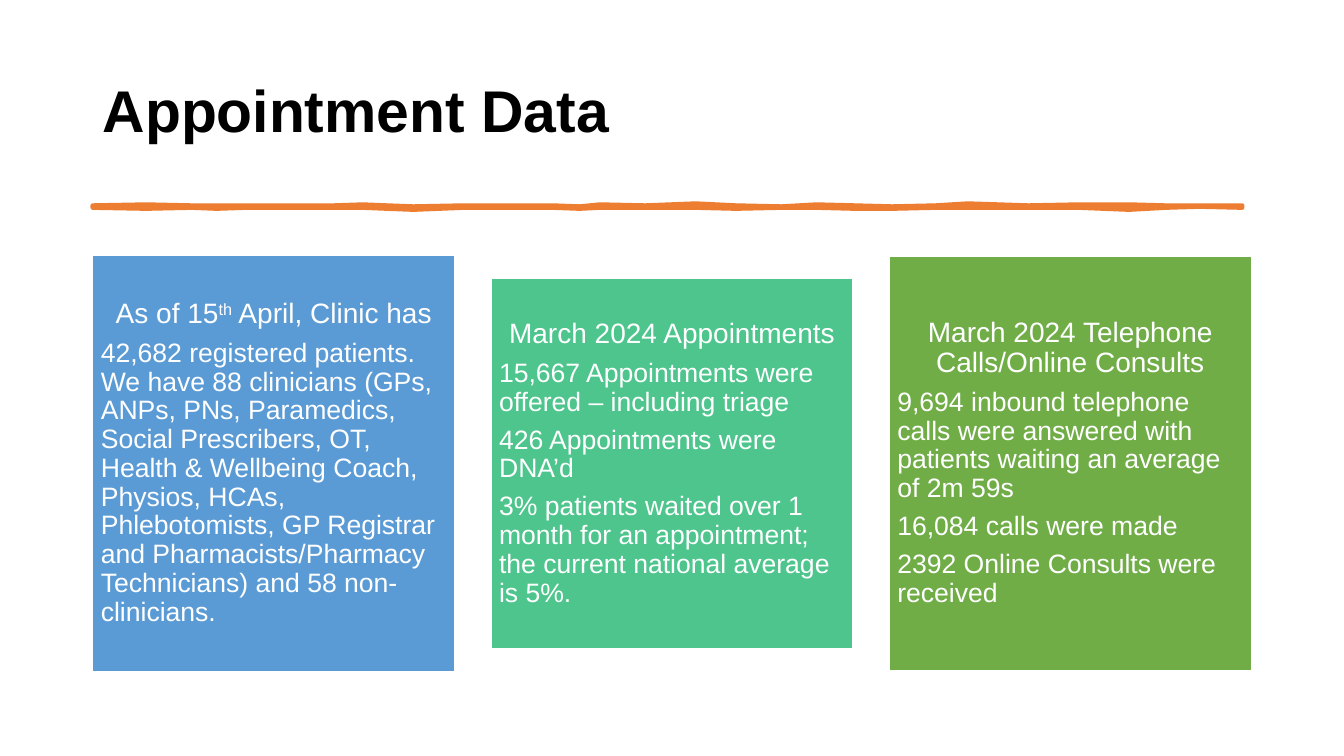
from pptx import Presentation
from pptx.dml.color import RGBColor
from pptx.enum.shapes import MSO_SHAPE
from pptx.enum.text import MSO_ANCHOR, PP_ALIGN
from pptx.util import Inches, Pt

FONT = "Arial"
COLORS = {
    "title": "000000",
    "rule": "ED7D31",
    "patients": "5B9BD5",
    "appointments": "4DC58D",
    "calls": "70AD47",
    "white": "FFFFFF",
}
TITLE = "Appointment Data"
CARDS = [
    {
        "color": "patients", "top": 2.53, "height": 4.13,
        "heading": [("As of 15", False), ("th", True), (" April, Clinic has", False)],
        "body": [
            "42,682 registered patients. We have 88 clinicians (GPs, ANPs, PNs, "
            "Paramedics, Social Prescribers, OT, Health & Wellbeing Coach, Physios, "
            "HCAs, Phlebotomists, GP Registrar and Pharmacists/Pharmacy Technicians) "
            "and 58 non-clinicians.",
        ],
    },
    {
        "color": "appointments", "top": 2.76, "height": 3.68,
        "heading": [("March 2024 Appointments", False)],
        "body": [
            "15,667 Appointments were offered – including triage",
            "426 Appointments were DNA’d",
            "3% patients waited over 1 month for an appointment; "
            "the current national average is 5%.",
        ],
    },
    {
        "color": "calls", "top": 2.54, "height": 4.11,
        "heading": [("March 2024 Telephone Calls/Online Consults", False)],
        "body": [
            "9,694 inbound telephone calls were answered with patients "
            "waiting an average of 2m 59s",
            "16,084 calls were made",
            "2392 Online Consults were received",
        ],
    },
]
LEFT, CARD_WIDTH, CARD_STEP = 0.92, 3.59, 3.95
CARD_INSET = 0.08
HEADING_SIZE, BODY_SIZE = 20, 19
SPACE_RATIO = 0.35

RULE_EDGES = [
    (0.92, 2.04, 2.06), (1.45, 2.03, 2.07), (1.9, 2.04, 2.06),
    (2.15, 2.04, 2.07), (2.44, 2.04, 2.06), (2.9, 2.04, 2.06),
    (3.31, 2.04, 2.06), (3.6, 2.03, 2.06), (3.84, 2.04, 2.07),
    (4.1, 2.05, 2.08), (4.6, 2.04, 2.06), (5.05, 2.04, 2.06),
    (5.48, 2.04, 2.06), (5.75, 2.05, 2.07), (5.95, 2.03, 2.06),
    (6.4, 2.04, 2.06), (6.9, 2.02, 2.06), (7.3, 2.04, 2.07),
    (7.75, 2.05, 2.06), (8.1, 2.03, 2.06), (8.48, 2.04, 2.07),
    (8.85, 2.05, 2.07), (9.28, 2.04, 2.06), (9.6, 2.02, 2.06),
    (10.2, 2.04, 2.06), (10.7, 2.03, 2.06), (11.2, 2.03, 2.08),
    (11.56, 2.04, 2.06), (11.9, 2.04, 2.05), (12.32, 2.04, 2.06),
]


def color(name):
    return RGBColor.from_string(COLORS[name])


def style_run(run, size, color_name, bold=False):
    run.font.name = FONT
    run.font.size = Pt(size)
    run.font.bold = bold
    run.font.color.rgb = color(color_name)


def style_shape(shape, fill_name, line_name, line_width):
    shape.shadow.inherit = False
    shape.fill.solid()
    shape.fill.fore_color.rgb = color(fill_name)
    shape.line.color.rgb = color(line_name)
    shape.line.width = Pt(line_width)


def add_title(slide):
    box = slide.shapes.add_textbox(Inches(LEFT), Inches(0.4), Inches(11.5), Inches(1.45))
    frame = box.text_frame
    frame.word_wrap = True
    frame.vertical_anchor = MSO_ANCHOR.MIDDLE
    frame.text = TITLE
    paragraph = frame.paragraphs[0]
    paragraph.line_spacing = 0.9
    style_run(paragraph.runs[0], 42, "title", bold=True)


def add_rule(slide):
    top = [(x, upper) for x, upper, lower in RULE_EDGES]
    bottom = [(x, lower) for x, upper, lower in reversed(RULE_EDGES)]
    points = [(Inches(x), Inches(y)) for x, y in top + bottom]
    builder = slide.shapes.build_freeform(*points[0])
    builder.add_line_segments(points[1:], close=True)
    style_shape(builder.convert_to_shape(), "rule", "rule", 3.25)


def add_card(slide, index, card):
    shape = slide.shapes.add_shape(
        MSO_SHAPE.RECTANGLE, Inches(LEFT + index * CARD_STEP), Inches(card["top"]),
        Inches(CARD_WIDTH), Inches(card["height"]))
    style_shape(shape, card["color"], "white", 1)
    frame = shape.text_frame
    frame.word_wrap = True
    frame.vertical_anchor = MSO_ANCHOR.MIDDLE
    frame.margin_left = frame.margin_right = Inches(CARD_INSET)
    frame.margin_top = frame.margin_bottom = Inches(CARD_INSET)
    paragraphs = [card["heading"]] + [[(text, False)] for text in card["body"]]
    for position, pieces in enumerate(paragraphs):
        paragraph = frame.add_paragraph() if position else frame.paragraphs[0]
        size = BODY_SIZE if position else HEADING_SIZE
        paragraph.alignment = PP_ALIGN.LEFT if position else PP_ALIGN.CENTER
        paragraph.line_spacing = 0.9
        paragraph.space_after = Pt(size * SPACE_RATIO)
        for text, raised in pieces:
            run = paragraph.add_run()
            run.text = text
            style_run(run, size, "white")
            if raised:
                run._r.get_or_add_rPr().set("baseline", "30000")


def main():
    presentation = Presentation()
    presentation.slide_width = Inches(13.33)
    presentation.slide_height = Inches(7.5)
    slide = presentation.slides.add_slide(presentation.slide_layouts[6])
    add_title(slide)
    add_rule(slide)
    for index, card in enumerate(CARDS):
        add_card(slide, index, card)
    presentation.save("out.pptx")


if __name__ == "__main__":
    main()
